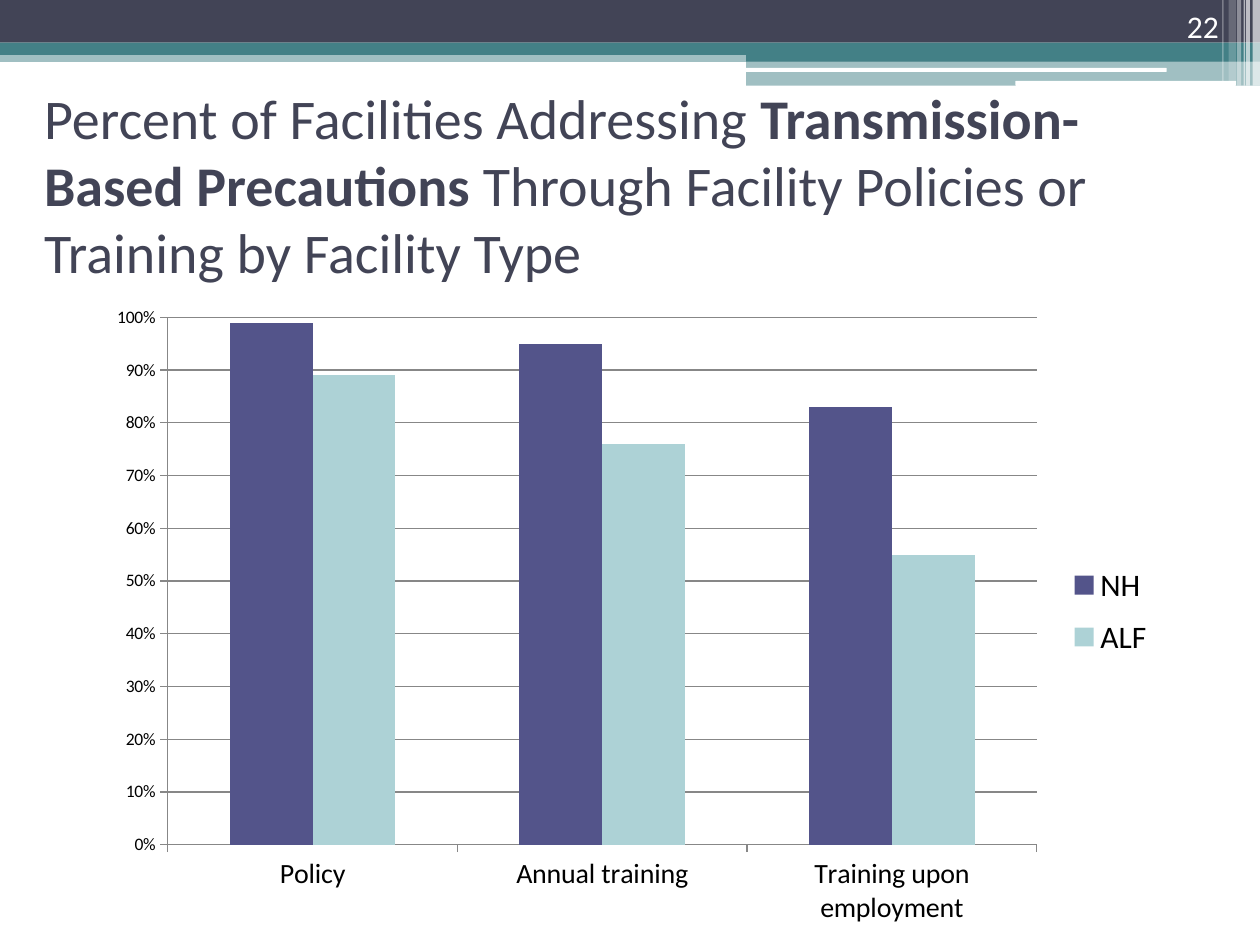
import pptx
import pptx.util
import pptx.chart.data
from dataclasses import dataclass
from lxml import etree
from pptx.dml.color import RGBColor
from pptx.enum.chart import XL_CHART_TYPE, XL_LEGEND_POSITION, XL_TICK_MARK
from pptx.enum.shapes import MSO_SHAPE
from pptx.enum.text import MSO_ANCHOR, PP_ALIGN
from pptx.oxml.ns import qn

Cm, Pt = pptx.util.Cm, pptx.util.Pt


@dataclass(frozen=True)
class Theme:
    font: str = "Calibri"
    dark: str = "424456"
    teal: str = "438086"
    white: str = "FFFFFF"
    black: str = "000000"
    grid: str = "878787"
    bars: tuple = ("53548A", "ADD2D6")
    title: int = 32
    large: int = 18
    label: int = 16
    small: int = 10


theme = Theme()


def put(obj, form):
    for name, value in form.items():
        setattr(obj, name, value)


def style(font, size, color, bold=False):
    put(font, {"name": theme.font, "size": Pt(size), "bold": bold})
    font.color.rgb = RGBColor.from_string(color)


def place(box, left, top, width, height):
    return Cm(box[0] + left), Cm(box[1] + top), Cm(width), Cm(height)


def bar(slide, box, area, color, alpha=100, kind=MSO_SHAPE.RECTANGLE):
    shape = slide.shapes.add_shape(kind, *place(box, *area))
    shape.shadow.inherit = False
    shape.line.fill.background()
    shape.fill.solid()
    shape.fill.fore_color.rgb = RGBColor.from_string(color)
    if alpha < 100:
        tint = shape.fill._xPr.find(".//" + qn("a:srgbClr"))
        etree.SubElement(tint, qn("a:alpha"), val=str(alpha * 1000))


def header(slide, box):
    wide, high = box[2:]
    half = 15.04
    # Full-width bands, then the step on the right
    for left, top, tall, color, alpha in (
        (0, 1.02, 0.23, theme.teal, 50),
        (0, 0, 0.86, theme.dark, 100),
        (0, 0.86, 0.25, theme.teal, 100),
        (half, 0.99, 0.25, theme.teal, 100),
        (half, 1.22, 0.51, theme.teal, 50),
    ):
        bar(slide, box, (left, top, wide - left, tall), color, alpha)
    # White rules
    for area in ((15.01, 1.37, 8.51, 0.08), (20.47, 1.63, 4.45, 0.1)):
        bar(slide, box, area, theme.white, kind=MSO_SHAPE.ROUNDED_RECTANGLE)
    # Sheer stripes at the right edge
    for left, width, tall, alpha in (
        (25.25, 0.15, high, 65),
        (25.12, 0.08, high, 65),
        (25.07, 0.03, high, 60),
        (24.94, 0.08, high, 40),
        (24.77, 0.15, 1.63, 20),
        (24.64, 0.03, 1.63, 30),
    ):
        bar(slide, box, (left, 0, width, tall), theme.white, alpha)


def words(slide, box, parts, size, color, anchor, align):
    frame = slide.shapes.add_textbox(*place(box, 0, 0, *box[2:])).text_frame
    put(frame, {"word_wrap": True, "vertical_anchor": anchor})
    para = frame.paragraphs[0]
    para.alignment = align
    for text, bold in parts:
        run = para.add_run()
        run.text = text
        style(run.font, size, color, bold)


def layout(parent, before, frame, inner=False):
    """Fix a chart part at fractions of the chart area."""
    for old in parent.findall(qn("c:layout")):
        parent.remove(old)
    node = etree.Element(qn("c:layout"))
    manual = etree.SubElement(node, qn("c:manualLayout"))
    pairs = [("layoutTarget", "inner")] if inner else []
    pairs += [("xMode", "edge"), ("yMode", "edge")]
    pairs += zip("xywh", map(str, frame))
    for tag, value in pairs:
        etree.SubElement(manual, qn("c:" + tag), val=value)
    parent.find(qn(before)).addprevious(node)


def graph(slide, box):
    data = pptx.chart.data.CategoryChartData(number_format="0%")
    data.categories = ["Policy", "Annual training", "Training upon employment"]
    data.add_series("NH", (0.99, 0.95, 0.83))
    data.add_series("ALF", (0.89, 0.76, 0.55))
    chart = slide.shapes.add_chart(
        XL_CHART_TYPE.COLUMN_CLUSTERED, *place(box, 0, 0, *box[2:]), data
    ).chart
    put(chart, {"has_title": False, "has_legend": True})
    style(chart.font, theme.small, theme.black)

    # Columns
    plot = chart.plots[0]
    put(plot, {"vary_by_categories": False, "gap_width": 150, "overlap": 0})
    for series, color in zip(plot.series, theme.bars):
        series.format.fill.solid()
        series.format.fill.fore_color.rgb = RGBColor.from_string(color)

    # Axes and grid
    cat, val = chart.category_axis, chart.value_axis
    put(val, {"minimum_scale": 0, "maximum_scale": 1, "major_unit": 0.1,
              "has_major_gridlines": True})
    put(val.tick_labels, {"number_format": "0%",
                          "number_format_is_linked": False})
    for axis, size in ((cat, theme.label), (val, theme.small)):
        put(axis, {"major_tick_mark": XL_TICK_MARK.OUTSIDE,
                   "minor_tick_mark": XL_TICK_MARK.NONE})
        style(axis.tick_labels.font, size, theme.black)
    for part in (cat, val, val.major_gridlines):
        part.format.line.width = Pt(0.75)
        part.format.line.color.rgb = RGBColor.from_string(theme.grid)

    # Legend and plot frame
    key = chart.legend
    put(key, {"position": XL_LEGEND_POSITION.RIGHT, "include_in_layout": False})
    style(key.font, theme.large, theme.black)
    layout(key._element, "c:overlay", (0.9, 0.4, 0.1, 0.19))
    area = chart._chartSpace.find(".//" + qn("c:plotArea"))
    layout(area, "c:barChart", (0.095, 0.02, 0.788, 0.853), inner=True)


def main():
    deck = pptx.Presentation()
    put(deck, {"slide_width": Cm(25.4), "slide_height": Cm(19.05)})
    slide = deck.slides.add_slide(deck.slide_layouts[6])
    header(slide, (0, 0, 25.4, 1.73))
    title = (
        ("Percent of Facilities Addressing ", False),
        ("Transmission-Based Precautions ", True),
        ("Through Facility Policies or Training by Facility Type", False),
    )
    words(slide, (0.64, 2.54, 23.93, 2.34), title, theme.title, theme.dark,
          MSO_ANCHOR.MIDDLE, PP_ALIGN.LEFT)
    words(slide, (22.71, 0, 2.11, 1.02), (("22", False),), theme.large,
          theme.white, MSO_ANCHOR.BOTTOM, PP_ALIGN.RIGHT)
    graph(slide, (1.27, 6.15, 22.23, 12.5))
    deck.save("out.pptx")


if __name__ == "__main__":
    main()
